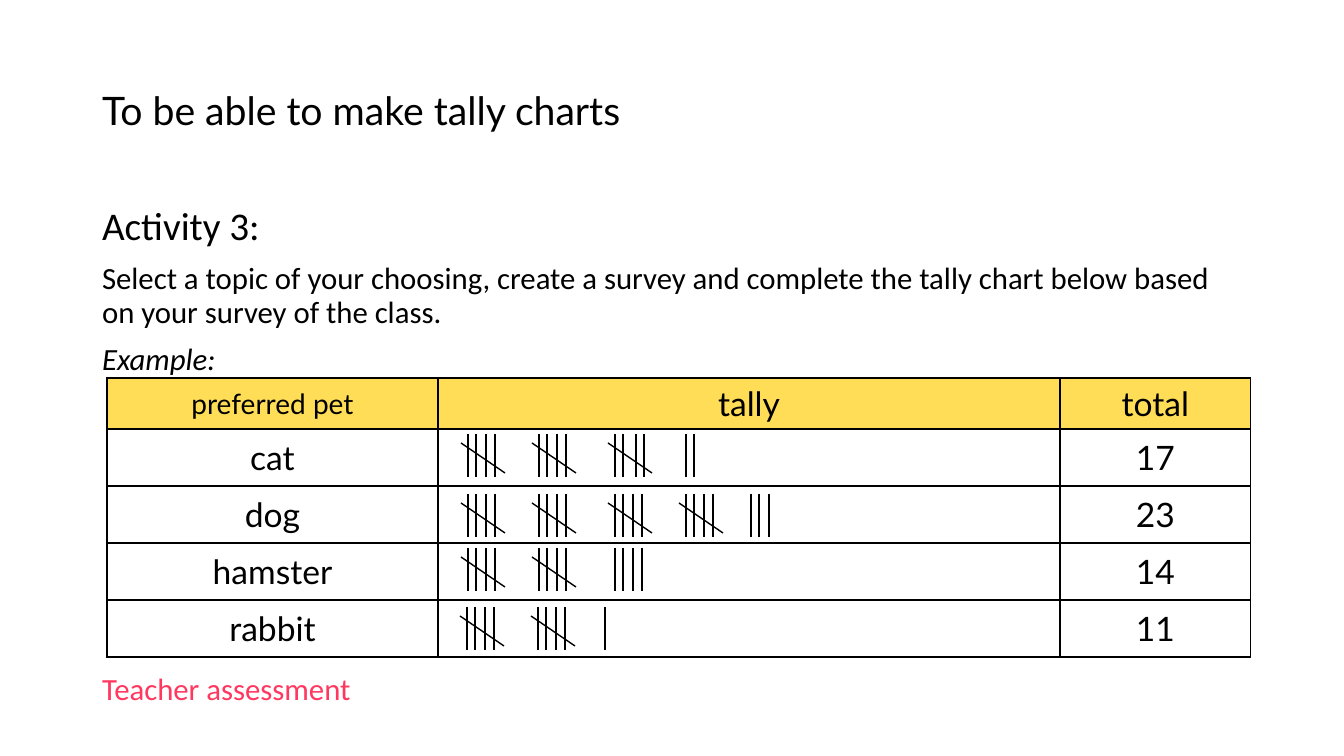
from lxml import etree
from pptx import Presentation
from pptx.dml.color import RGBColor
from pptx.enum.shapes import MSO_CONNECTOR
from pptx.enum.text import MSO_ANCHOR, MSO_AUTO_SIZE, PP_ALIGN
from pptx.oxml import parse_xml
from pptx.oxml.ns import nsdecls, qn
from pptx.util import Pt

LEFT, CENTER = PP_ALIGN.LEFT, PP_ALIGN.CENTER
MIDDLE, TOP = MSO_ANCHOR.MIDDLE, MSO_ANCHOR.TOP
NO_FIT = MSO_AUTO_SIZE.NONE
STRAIGHT = MSO_CONNECTOR.STRAIGHT

BLACK = RGBColor(0x00, 0x00, 0x00)
WHITE = RGBColor(0xFF, 0xFF, 0xFF)
YELLOW = RGBColor(0xFF, 0xDD, 0x57)
PINK = RGBColor(0xFF, 0x38, 0x60)

TITLE = "To be able to make tally charts"
BODY = [
    ("Activity 3:", dict(size=28)),
    ("Select a topic of your choosing, create a survey and complete the tally "
     "chart below based on your survey of the class.", dict(before=10)),
    ("Example:", dict(before=10, italic=True)),
    ("Teacher assessment", dict(before=212, color=PINK)),  # below the table
]
HEADER = [("preferred pet", 20), ("tally", 24), ("total", 24)]
# pet, total, top of its strokes, left of each tally group
PETS = [
    ("cat", 17, 434, (468, 539, 615, 686)),
    ("dog", 23, 494, (468, 539, 615, 686, 751)),
    ("hamster", 14, 548, (468, 539, 615)),
    ("rabbit", 11, 607, (467, 538, 605)),
]
STROKES = (0, 8, 18, 27)
WIDE_STROKES = {("cat", 2): (0, 8, 21, 29)}
STROKE_HEIGHT = 43
COLUMNS = (331, 622, 191)
HEADER_HEIGHT, ROW_HEIGHT = 51, 57
TABLE_LEFT, TABLE_TOP = 107, 378


def px(n):
    return round(n * 9144000 / 1008)


def write(p, text, size=22, font="Calibri", color=BLACK, italic=False,
          align=LEFT, before=0, spacing=0.9):
    p.alignment, p.line_spacing, p.space_before = align, spacing, Pt(before)
    r = p.add_run()
    r.text = text
    r.font.size, r.font.name, r.font.italic = Pt(size), font, italic
    r.font.bold = False
    r.font.color.rgb = color


def place(sp, left, top, width, height, anchor):
    sp.left, sp.top, sp.width, sp.height = map(px, (left, top, width, height))
    tf = sp.text_frame
    tf.word_wrap, tf.auto_size, tf.vertical_anchor = True, NO_FIT, anchor
    return tf


def fill_cell(cell, text, size, color):
    cell.fill.solid()
    cell.fill.fore_color.rgb = color
    cell.vertical_anchor = MIDDLE
    if text:
        write(cell.text_frame.paragraphs[0], text, size=size, font="Lato",
              align=CENTER, spacing=1.0)
    tcPr = cell._tc.get_or_add_tcPr()
    for i, side in enumerate(("lnL", "lnR", "lnT", "lnB")):
        tcPr.insert(i, parse_xml(
            f'<a:{side} {nsdecls("a")} w="12700"><a:solidFill>'
            f'<a:srgbClr val="{BLACK}"/></a:solidFill></a:{side}>'))


def add_stroke(s, x1, y1, x2, y2):
    line = s.shapes.add_connector(STRAIGHT, px(x1), px(y1), px(x2), px(y2))
    line.line.color.rgb = BLACK
    line.line.width = Pt(1)
    etree.SubElement(line._element.spPr, qn("a:effectLst"))


def add_tally(s, pet, total, top, lefts):
    """Draw bundles of five (four strokes and a slash), then the remainder."""
    fives, rest = divmod(total, 5)
    for i, left in enumerate(lefts):
        offsets = WIDE_STROKES.get((pet, i), STROKES)
        for dx in offsets if i < fives else offsets[:rest]:
            add_stroke(s, left + dx, top, left + dx, top + STROKE_HEIGHT)
        if i < fives:
            add_stroke(s, left - 7, top + 9, left + 37, top + 39)


prs = Presentation()
prs.slide_width, prs.slide_height = px(1344), px(756)
s = prs.slides.add_slide(prs.slide_layouts[1])

tf = place(s.shapes.title, 92, 40, 968, 146, MIDDLE)
write(tf.paragraphs[0], TITLE, size=28, font="Lato")

tf = place(s.placeholders[1], 92, 202, 1159, 480, TOP)
for i, (text, style) in enumerate(BODY):
    p = tf.add_paragraph() if i else tf.paragraphs[0]
    pPr = p._p.get_or_add_pPr()
    pPr.set("marL", "0")
    pPr.set("indent", "0")
    etree.SubElement(pPr, qn("a:buNone"))
    write(p, text, **style)

rows = [HEADER] + [[(pet, 24), ("", 24), (str(total), 24)]
                   for pet, total, _, _ in PETS]
heights = [HEADER_HEIGHT] + [ROW_HEIGHT] * len(PETS)
table = s.shapes.add_table(len(rows), len(COLUMNS), px(TABLE_LEFT), px(TABLE_TOP),
                           px(sum(COLUMNS)), px(sum(heights))).table
table.first_row = table.horz_banding = False
for column, width in zip(table.columns, COLUMNS):
    column.width = px(width)
for i, row in enumerate(rows):
    table.rows[i].height = px(heights[i])
    for j, (text, size) in enumerate(row):
        fill_cell(table.cell(i, j), text, size, WHITE if i else YELLOW)

for pet_row in PETS:
    add_tally(s, *pet_row)

prs.save("out.pptx")
